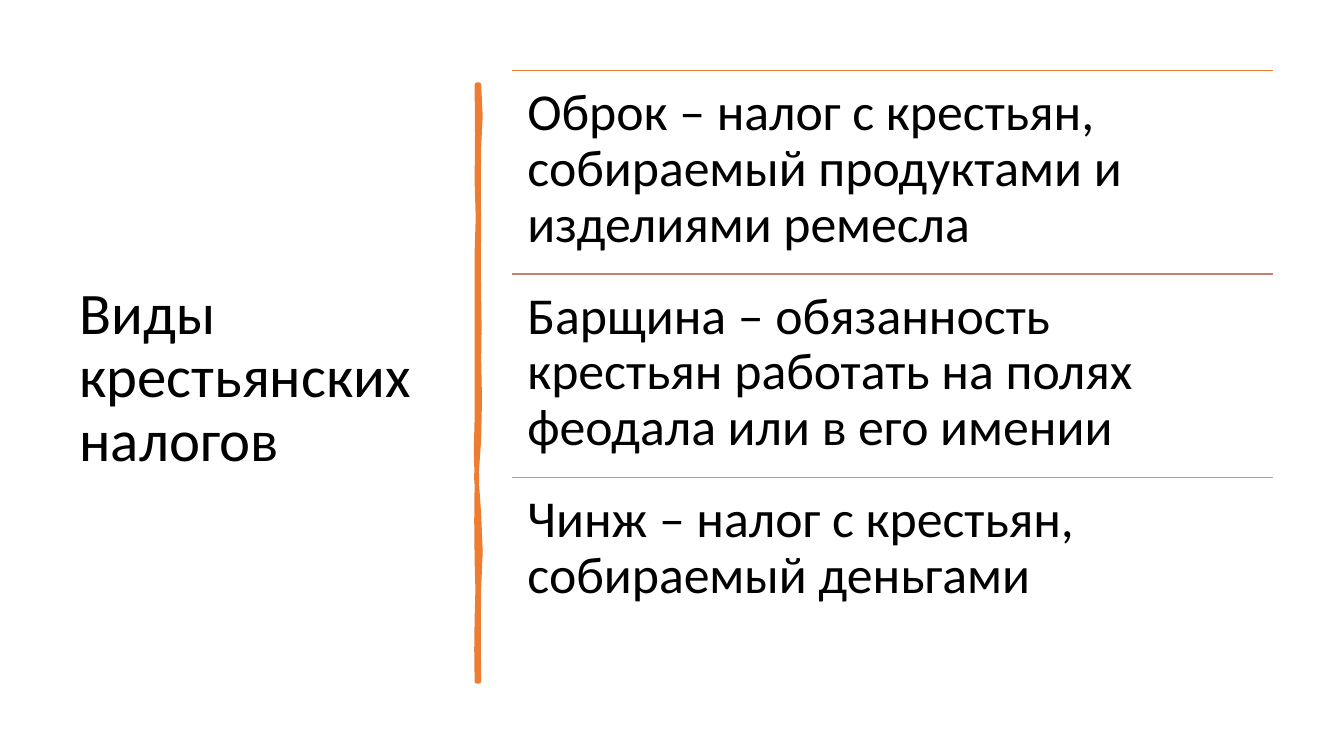
import pptx
import pptx.dml.color
import pptx.enum.shapes
import pptx.enum.text
import pptx.oxml.ns
import pptx.util
from lxml import etree

PX = 9144
FONT = "Calibri"
COLORS = {"text": "000000", "orange": "ED7D31", "rust": "C48170", "gray": "A5A5A5"}
TAXES = [
    ("Оброк – налог с крестьян, собираемый продуктами и изделиями ремесла", "orange"),
    ("Барщина – обязанность крестьян работать на полях феодала или в его имении", "rust"),
    ("Чинж – налог с крестьян, собираемый деньгами", "gray"),
]
RIGHT_EDGE = [(62, 2, 2), (142, -2, 1), (210, -1, 0), (272, -1, 2),
              (352, -2, 4), (426, -4, -3), (500, 2, 2), (592, -2, 1)]
LEFT_EDGE = [(529, 1, -2), (473, 1, 1), (393, -1, 0), (331, 0, -2),
             (251, 1, -1), (166, 1, -1), (97, 1, 2), (0, -3, 4)]
STEPS = 2


def color(name):
    """Return the named colour."""
    return pptx.dml.color.RGBColor.from_string(COLORS[name])


def add_text(page, box, text, size, insets, anchor):
    """Write one paragraph in the box, with left, right and vertical insets."""
    shape = page.shapes.add_textbox(*(value * PX for value in box))
    frame = shape.text_frame
    frame.word_wrap = True
    frame.vertical_anchor = anchor
    frame.margin_left, frame.margin_right = insets[0] * PX, insets[1] * PX
    frame.margin_top = frame.margin_bottom = insets[2] * PX
    para = frame.paragraphs[0]
    para.text = text
    para.line_spacing = 0.9
    para.font.name = FONT
    para.font.size = pptx.util.Pt(size)
    para.font.color.rgb = color("text")


def add_rule(page, left, top, width, color_name):
    """Draw a thin horizontal line."""
    rule = page.shapes.add_connector(
        pptx.enum.shapes.MSO_CONNECTOR.STRAIGHT,
        left * PX, top * PX, (left + width) * PX, top * PX)
    rule.line.color.rgb = color(color_name)
    rule.line.width = pptx.util.Pt(1)
    etree.SubElement(rule._element.spPr, pptx.oxml.ns.qn("a:effectLst"))


def wavy_edge(left, top, start, segments):
    """Return points, in tenths of px, along an edge of gentle bulges."""
    points = []
    for end, first, second in segments:
        for step in range(1, STEPS + 1):
            t = step / STEPS
            bulge = 3 * t * (1 - t) * ((1 - t) * first + t * second)
            points.append((round(10 * (left + bulge)),
                           round(10 * (top + start + t * (end - start)))))
        start = end
    return points


def add_divider(page, box):
    """Draw the hand-drawn vertical stroke in the box."""
    left, top, width, height = box
    right = left + width
    points = wavy_edge(right, top, 0, RIGHT_EDGE)
    points.append((10 * left, 10 * (top + height)))
    points += wavy_edge(left, top, height, LEFT_EDGE)
    builder = page.shapes.build_freeform(10 * right, 10 * top, scale=PX / 10)
    builder.add_line_segments(points, close=True)
    stroke = builder.convert_to_shape()
    stroke.shadow.inherit = False
    stroke.fill.solid()
    stroke.fill.fore_color.rgb = color("orange")
    stroke.line.color.rgb = color("orange")
    stroke.line.width = pptx.util.Pt(3.25)


def add_taxes(page, box):
    """Stack the definitions in equal rows, each under a line."""
    left, top, width, height = box
    row_height = height // len(TAXES)
    for index, (text, color_name) in enumerate(TAXES):
        row_top = top + index * row_height
        add_rule(page, left, row_top, width, color_name)
        add_text(page, (left, row_top, width, row_height), text, 37, (15, 20, 15),
                 pptx.enum.text.MSO_ANCHOR.TOP)


def main():
    """Build and save the deck."""
    deck = pptx.Presentation()
    deck.slide_width = 1333 * PX
    deck.slide_height = 750 * PX
    page = deck.slides.add_slide(deck.slide_layouts[6])
    add_text(page, (69, 70, 374, 611), "Виды крестьянских налогов", 42, (10, 10, 5),
             pptx.enum.text.MSO_ANCHOR.MIDDLE)
    add_divider(page, (473, 84, 2, 592))
    add_taxes(page, (508, 70, 755, 606))
    deck.save("out.pptx")


if __name__ == "__main__":
    main()
